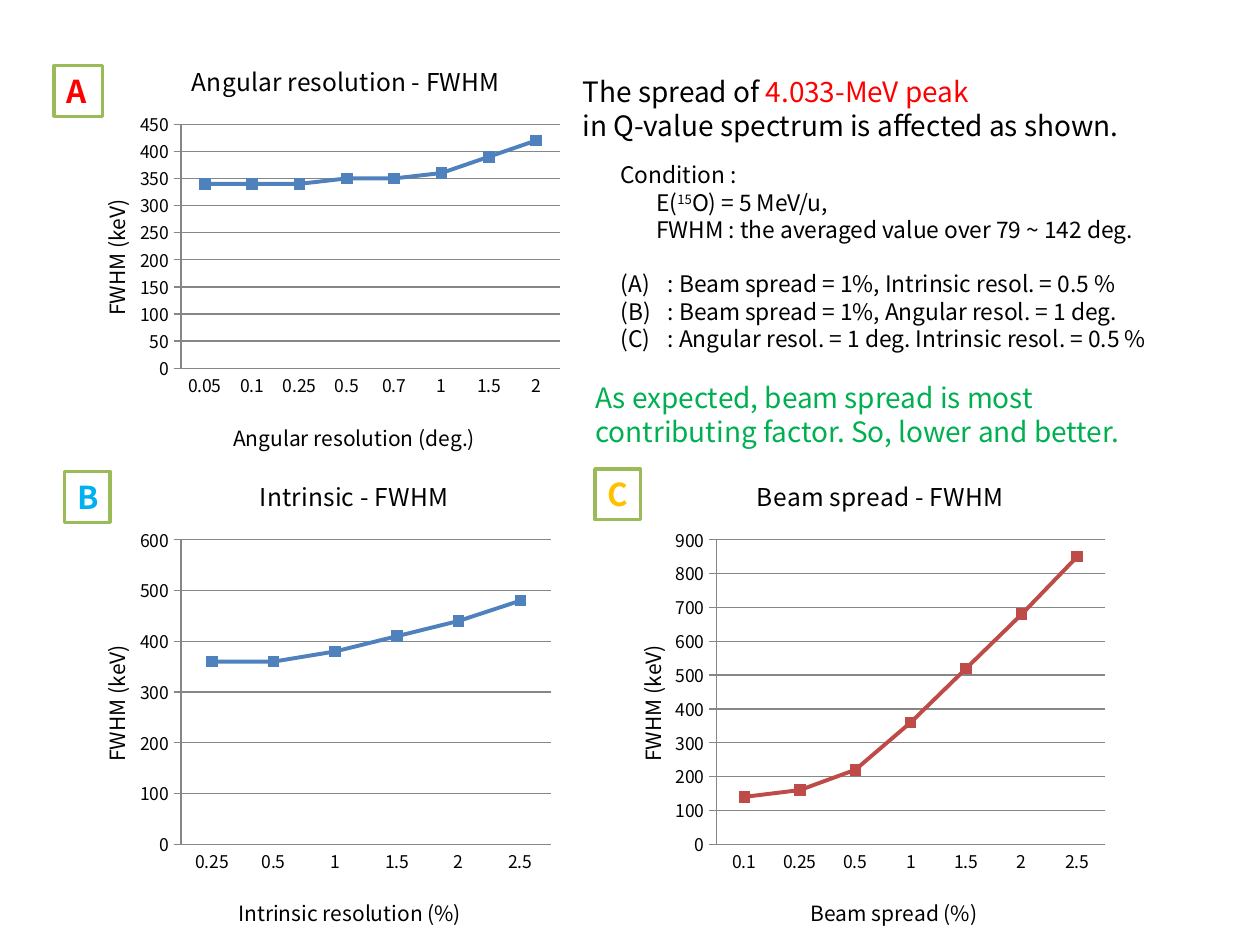
"""Build the slide on how three resolutions affect the FWHM."""
import dataclasses

import lxml.etree
import pptx
import pptx.chart.data
import pptx.dml.color
import pptx.enum.chart
import pptx.enum.shapes
import pptx.enum.text
import pptx.oxml.ns
import pptx.util

Pt = pptx.util.Pt
qn = pptx.oxml.ns.qn


@dataclasses.dataclass(frozen=True)
class Theme:
    """Font, colours and type sizes of the slide."""
    font: str = "Noto Sans CJK KR"
    text: str = "000000"
    paper: str = "FFFFFF"
    frame: str = "9BBB59"
    axis: str = "868686"
    blue: str = "4F81BD"
    brick: str = "BE4B48"
    red: str = "FF0000"
    sky: str = "00B0F0"
    gold: str = "FFC000"
    green: str = "00B050"
    badge: int = 18
    lead: int = 16
    chart_title: int = 14
    body: int = 13
    axis_title: int = 12
    label: int = 10
    leading: float = 1.2


THEME = Theme()


def rgb(color):
    """Turn a hex string into a colour."""
    return pptx.dml.color.RGBColor.from_string(color)


def style(font, size, color=THEME.text, bold=False):
    """Format a font in the slide's typeface."""
    font.name, font.size, font.bold = THEME.font, Pt(size), bold
    font.color.rgb = rgb(color)


def add_run(p, text, size, color=THEME.text, bold=False, raised=False):
    """Append one formatted run to a paragraph."""
    r = p.add_run()
    r.text = text
    style(r.font, size, color, bold)
    if raised:
        r.font._element.set("baseline", "30000")


def add_line(tf, size, first=False):
    """Start a paragraph with the slide's line spacing."""
    p = tf.paragraphs[0] if first else tf.add_paragraph()
    p.line_spacing = Pt(size * THEME.leading)
    p.alignment = pptx.enum.text.PP_ALIGN.LEFT
    return p


def add_text(s, box, size, lines):
    """Add a text box from lines of (text, options) runs."""
    tf = s.shapes.add_textbox(*map(Pt, box)).text_frame
    tf.word_wrap = True
    for i, runs in enumerate(lines):
        p = add_line(tf, size, first=i == 0)
        for text, options in runs:
            add_run(p, text, size, **options)
    return tf


def indent(p, left, hanging=0):
    """Set the left margin and hanging indent of a paragraph."""
    pPr = p._p.get_or_add_pPr()
    pPr.set("marL", str(Pt(left)))
    pPr.set("indent", str(-Pt(hanging)))
    return pPr


def add_conditions(s):
    """Add the list of conditions with its lettered items."""
    items = [
        ": Beam spread = 1%, Intrinsic resol. = 0.5 %",
        ": Beam spread = 1%, Angular resol. = 1 deg.",
        ": Angular resol. = 1 deg. Intrinsic resol. = 0.5 %",
    ]
    lines = [
        [("Condition :", {})],
        [("E(", {}), ("15", {"raised": True}), ("O) = 5 MeV/u,", {})],
        [("FWHM : the averaged value over 79 ~ 142 deg.", {})],
    ] + [[(item, {})] for item in items]
    tf = add_text(s, (347.5, 88.5, 343, 117.5), THEME.body, lines)
    ps = tf.paragraphs
    for p in ps[1:3]:
        indent(p, 20.5)
    ps[3].space_before = Pt(THEME.body * THEME.leading)
    for p in ps[3:]:
        pPr = indent(p, 27, 27)
        lxml.etree.SubElement(pPr, qn("a:buAutoNum"), type="alphaUcParenBoth")


def add_badge(s, letter, left, top, width, color):
    """Add a framed letter that names a chart."""
    sp = s.shapes.add_shape(pptx.enum.shapes.MSO_SHAPE.RECTANGLE,
                            Pt(left), Pt(top), Pt(width), Pt(29))
    sp.shadow.inherit = False
    sp.fill.solid()
    sp.fill.fore_color.rgb = rgb(THEME.paper)
    sp.line.color.rgb = rgb(THEME.frame)
    sp.line.width = Pt(2)
    tf = sp.text_frame
    tf.word_wrap = False
    p = add_line(tf, THEME.badge, first=True)
    add_run(p, letter, THEME.badge, color, bold=True)


def place(element, index, **values):
    """Give a chart part a manual layout in fractions of the chart."""
    for old in element.findall(qn("c:layout")):
        element.remove(old)
    layout = lxml.etree.Element(qn("c:layout"))
    manual = lxml.etree.SubElement(layout, qn("c:manualLayout"))
    if "w" in values:
        lxml.etree.SubElement(manual, qn("c:layoutTarget"), val="inner")
    for key in ("x", "y"):
        lxml.etree.SubElement(manual, qn(f"c:{key}Mode"), val="edge")
    for key, value in values.items():
        lxml.etree.SubElement(manual, qn(f"c:{key}"), val=f"{value:.4f}")
    element.insert(index, layout)


def add_title(title, text, size, x, y):
    """Write and place a chart or axis title."""
    add_run(title.text_frame.paragraphs[0], text, size)
    place(title.element, 1, x=x, y=y)


def format_axis(axis, tick):
    """Format the line, ticks and labels of an axis."""
    axis.format.line.color.rgb = rgb(THEME.axis)
    axis.format.line.width = Pt(0.75)
    axis.major_tick_mark = tick
    axis.minor_tick_mark = pptx.enum.chart.XL_TICK_MARK.NONE
    style(axis.tick_labels.font, THEME.label)


def add_line_chart(s, box, title, title_x, unit, unit_x, points, top, step, color):
    """Add a line chart of FWHM against one kind of resolution."""
    data = pptx.chart.data.CategoryChartData()
    data.categories = list(points)
    data.add_series("Series 1", list(points.values()))
    chart = s.shapes.add_chart(pptx.enum.chart.XL_CHART_TYPE.LINE_MARKERS,
                               *map(Pt, box), data).chart
    width, height = box[2:]
    plot_w, plot_h = width - 72.5, height - 109.5
    style(chart.font, THEME.label)
    chart.has_legend = False
    chart.plots[0].vary_by_categories = False
    place(chart.element.find(".//" + qn("c:plotArea")), 0, x=66.5 / width,
          y=50 / height, w=plot_w / width, h=plot_h / height)

    cat, val = chart.category_axis, chart.value_axis
    ticks = pptx.enum.chart.XL_TICK_MARK
    format_axis(cat, ticks.NONE)
    format_axis(val, ticks.CROSS)
    val.minimum_scale, val.maximum_scale, val.major_unit = 0, top, step
    val.has_major_gridlines = True
    val.major_gridlines.format.line.color.rgb = rgb(THEME.axis)
    val.major_gridlines.format.line.width = Pt(0.75)

    add_title(chart.chart_title, title, THEME.chart_title, title_x / width, 10.5 / height)
    add_title(cat.axis_title, unit, THEME.axis_title, unit_x / width, 1 - 33 / height)
    add_title(val.axis_title, "FWHM (keV)", THEME.axis_title,
              17 / width, (21 + plot_h / 2) / height)
    body = val.axis_title.element.find(".//" + qn("a:bodyPr"))
    body.set("rot", "-5400000")
    body.set("vert", "horz")

    series = chart.plots[0].series[0]
    series.smooth = False
    series.format.line.color.rgb = rgb(color)
    series.format.line.width = Pt(2.25)
    marker = series.marker
    marker.style, marker.size = pptx.enum.chart.XL_MARKER_STYLE.SQUARE, 6
    marker.format.fill.solid()
    marker.format.fill.fore_color.rgb = rgb(color)
    marker.format.line.color.rgb = rgb(color)


def main():
    """Build and save the slide."""
    prs = pptx.Presentation()
    prs.slide_width, prs.slide_height = Pt(720), Pt(540)
    s = prs.slides.add_slide(prs.slide_layouts[6])

    add_line_chart(s, (37, 258.5, 284, 283.5), "Intrinsic - FWHM", 109,
                   "Intrinsic resolution (%)", 97,
                   {"0.25": 360, "0.5": 360, "1": 380, "1.5": 410, "2": 440, "2.5": 480},
                   600, 100, THEME.blue)
    add_line_chart(s, (343, 258.5, 294.5, 283.5), "Beam spread - FWHM", 87,
                   "Beam spread (%)", 118,
                   {"0.1": 140, "0.25": 160, "0.5": 220, "1": 360, "1.5": 520,
                    "2": 680, "2.5": 850},
                   900, 100, THEME.brick)
    add_line_chart(s, (37, 21, 289, 249), "Angular resolution - FWHM", 70,
                   "Angular resolution (deg.)", 94,
                   {"0.05": 340, "0.1": 340, "0.25": 340, "0.5": 350, "0.7": 350,
                    "1": 360, "1.5": 390, "2": 420},
                   450, 50, THEME.blue)

    add_badge(s, "A", 31, 37.5, 27.5, THEME.red)
    add_badge(s, "B", 37, 269.5, 26, THEME.sky)
    add_badge(s, "C", 340, 268, 26, THEME.gold)

    add_text(s, (326, 39, 348.5, 46), THEME.lead, [
        [("The spread of ", {}), ("4.033-MeV peak", {"color": THEME.red})],
        [("in Q-value spectrum is affected as shown.", {})],
    ])
    add_conditions(s)
    add_text(s, (333, 214, 339, 46), THEME.lead, [
        [("As expected, beam spread is most", {"color": THEME.green})],
        [("contributing factor. So, lower and better.", {"color": THEME.green})],
    ])
    prs.save("out.pptx")


if __name__ == "__main__":
    main()
